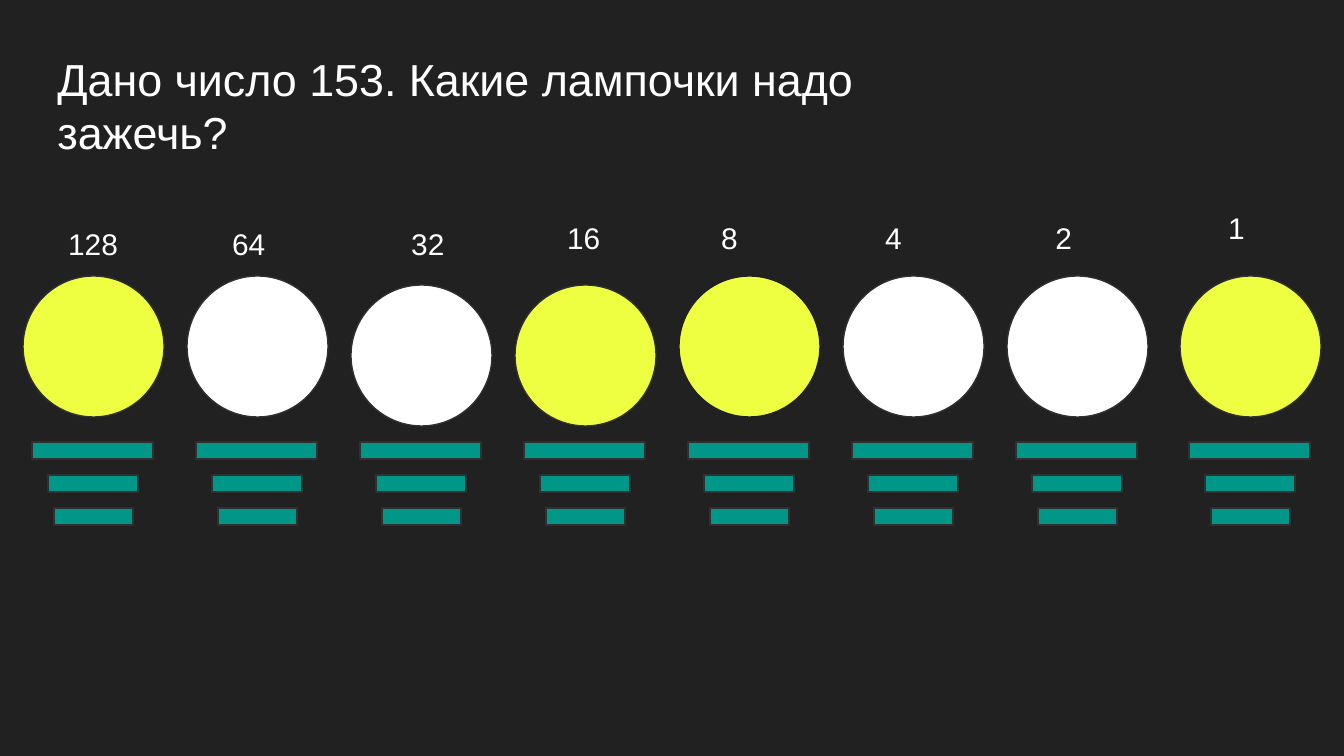
from pptx import Presentation
from pptx.dml.color import RGBColor
from pptx.enum.shapes import MSO_SHAPE
from pptx.enum.text import MSO_AUTO_SIZE
from pptx.util import Emu, Pt

SCALE = 914400 / 134.4
WHITE, YELLOW, TEAL = "FFFFFF", "EEFF41", "009688"
DARK, EDGE = "212121", "303030"


def place(kind, box, fill, edge=EDGE):
    """Add a filled, outlined shape; box is left, top, width, height in px."""
    shape = slide.shapes.add_shape(kind, *(Emu(round(n * SCALE)) for n in box))
    shape.shadow.inherit = False
    shape.fill.solid()
    shape.fill.fore_color.rgb = RGBColor.from_string(fill)
    shape.line.color.rgb = RGBColor.from_string(edge)
    shape.line.width = Pt(0.75)


def write(text, box, size):
    """Add a wrapped text box; box is left, top, width, height in px."""
    label = slide.shapes.add_textbox(*(Emu(round(n * SCALE)) for n in box))
    frame = label.text_frame
    pad = Pt(7.2)
    style = {"word_wrap": True, "auto_size": MSO_AUTO_SIZE.SHAPE_TO_FIT_TEXT,
             "margin_left": pad, "margin_right": pad,
             "margin_top": pad, "margin_bottom": pad}
    for name, value in style.items():
        setattr(frame, name, value)
    run = frame.paragraphs[0].add_run()
    run.text = text
    for name, value in {"name": "Arial", "size": Pt(size)}.items():
        setattr(run.font, name, value)
    run.font.color.rgb = RGBColor.from_string(WHITE)


deck = Presentation()
deck.slide_width = Emu(round(1344 * SCALE))
deck.slide_height = Emu(round(756 * SCALE))
slide = deck.slides.add_slide(deck.slide_layouts[6])
slide.background.fill.solid()
slide.background.fill.fore_color.rgb = RGBColor.from_string(DARK)

# bar offset from the lamp's left edge, and bar width
bars = [(9, 121), (25, 90), (31, 79)]

# bit value, bulb top, label left, top and width
lamps = [
    (128, 276, 55, 212, 156),
    (64, 276, 219, 212, 122),
    (32, 285, 398, 212, 109),
    (16, 285, 554, 206, 109),
    (8, 276, 708, 206, 81),
    (4, 276, 872, 206, 81),
    (2, 276, 1042, 206, 81),
    (1, 276, 1215, 196, 81),
]
number = 153

for i, (bit, top, left, high, wide) in enumerate(lamps):
    x = 1180 if bit == 1 else 23 + 164 * i
    for row, (shift, width) in enumerate(bars):
        place(MSO_SHAPE.RECTANGLE, (x + shift, 442 + 33 * row, width, 17), TEAL)
    place(MSO_SHAPE.OVAL, (x, top, 141, 141),
          YELLOW if number & bit else WHITE, DARK if bit == 8 else EDGE)
    write(str(bit), (left, high, wide, 63), 16)

write(f"Дано число {number}. Какие лампочки надо зажечь?", (44, 38, 993, 136), 24)

deck.save("out.pptx")
